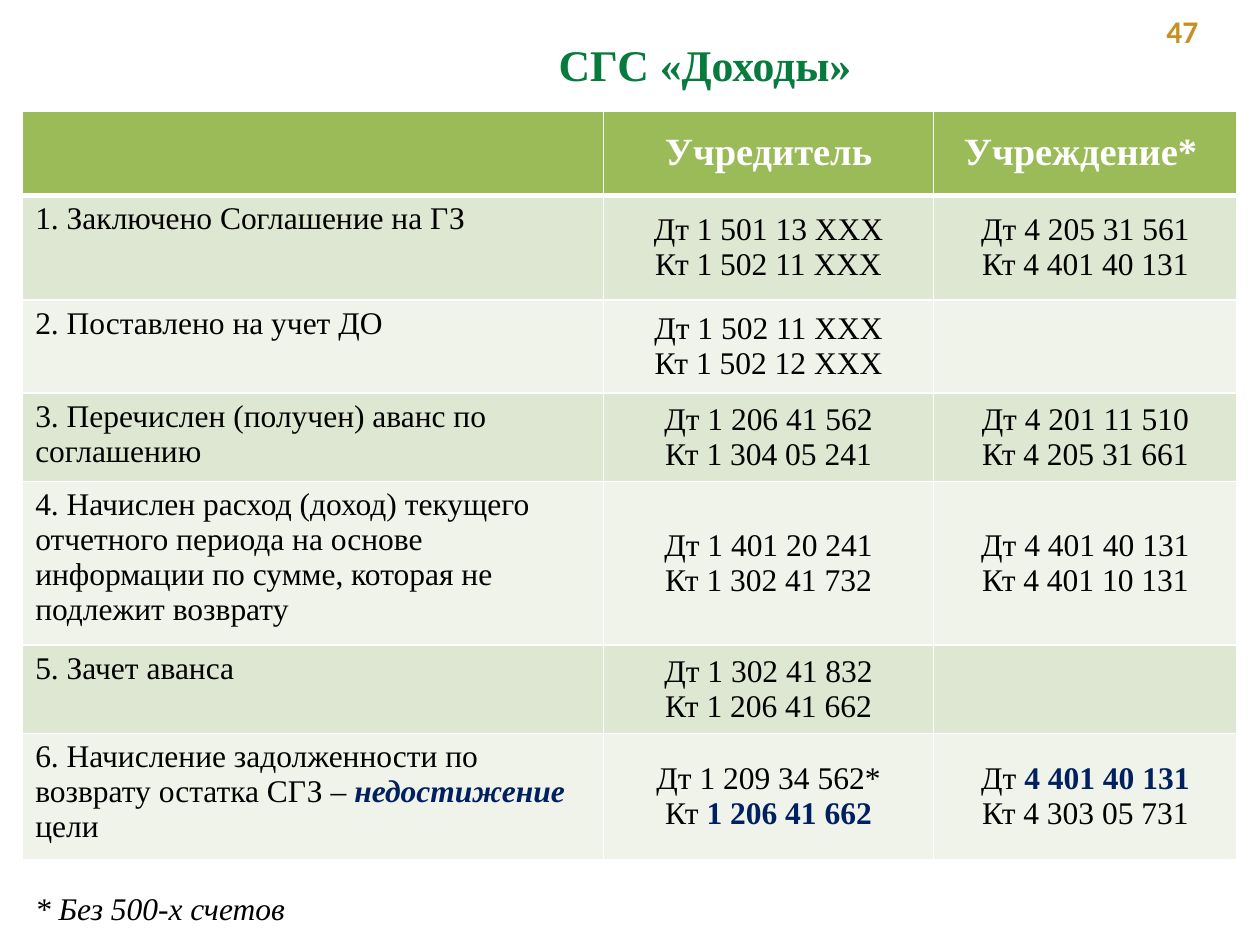
from lxml.etree import SubElement
from pptx import Presentation
from pptx.dml.color import RGBColor
from pptx.enum.text import MSO_ANCHOR, MSO_AUTO_SIZE, PP_ALIGN
from pptx.oxml.ns import qn
from pptx.util import Inches, Pt

SERIF = "Times New Roman"
BLACK, WHITE, NAVY = "000000", "FFFFFF", "002060"
HEADER_FILL, BAND_FILLS = "9BBB59", ("DEE7D1", "EFF3EA")

COL_WIDTHS = (4.61, 2.62, 2.41)
ROW_HEIGHTS = (0.67, 0.83, 0.74, 0.7, 1.3, 0.7, 1)
HEADERS = ("", "Учредитель", "Учреждение* ")
KEY_WORD = ("недостижение", {"color": NAVY, "bold": True, "italic": True})


def key_account(number):
    return (" " + number, {"color": NAVY, "bold": True})


ENTRIES = (
    (["1. Заключено Соглашение на ГЗ"],
     (["Дт 1 501 13 ХХХ"], ["Кт 1 502 11 ХХХ"]),
     (["Дт 4 205 31 561"], ["Кт 4 401 40 131"])),
    (["2. Поставлено на учет ДО"],
     (["Дт 1 502 11 ХХХ"], ["Кт 1 502 12 ХХХ"]),
     ()),
    (["3. Перечислен (получен) аванс по соглашению"],
     (["Дт 1 206 41 562"], ["Кт 1 304 05 241"]),
     (["Дт 4 201 11 510"], ["Кт 4 205 31 661"])),
    (["4. Начислен расход (доход) текущего отчетного периода на основе "
      "информации по сумме, которая не подлежит возврату"],
     (["Дт 1 401 20 241"], ["Кт 1 302 41 732"]),
     (["Дт 4 401 40 131"], ["Кт 4 401 10 131"])),
    (["5. Зачет аванса"],
     (["Дт 1 302 41 832"], ["Кт 1 206 41 662"]),
     ()),
    (["6. Начисление задолженности по возврату остатка СГЗ – ", KEY_WORD, " цели"],
     (["Дт 1 209 34 562*"], ["Кт", key_account("1 206 41 662")]),
     (["Дт", key_account("4 401 40 131")], ["Кт 4 303 05 731"])),
)


def rgb(color):
    return RGBColor.from_string(color)


def add_run(p, text, size=18, font=SERIF, color=BLACK, bold=False, italic=False):
    r = p.add_run()
    r.text = text
    r.font.size, r.font.name = Pt(size), font
    r.font.bold, r.font.italic = bold, italic
    r.font.color.rgb = rgb(color)


def place(sp, box):
    sp.left, sp.top, sp.width, sp.height = (Inches(v) for v in box)


def add_title(slide, box):
    sp = slide.shapes.title
    place(sp, box)
    tf = sp.text_frame
    tf.word_wrap = True
    tf.auto_size = MSO_AUTO_SIZE.NONE
    tf.vertical_anchor = MSO_ANCHOR.TOP
    p = tf.paragraphs[0]
    p.alignment = PP_ALIGN.CENTER
    add_run(p, "СГС «Доходы»", size=25, color="077A3E", bold=True)


def add_label(slide, box, text, **style):
    sp = slide.shapes.add_textbox(*(Inches(v) for v in box))
    tf = sp.text_frame
    tf.word_wrap = True
    add_run(tf.paragraphs[0], text, **style)


def format_cell(cell, fill, top=1, bottom=1):
    tcPr = cell._tc.get_or_add_tcPr()
    for side, width in (("L", 1), ("R", 1), ("T", top), ("B", bottom)):
        ln = SubElement(tcPr, qn("a:ln" + side), w=str(Pt(width)))
        SubElement(SubElement(ln, qn("a:solidFill")), qn("a:srgbClr"), val=WHITE)
    cell.fill.solid()
    cell.fill.fore_color.rgb = rgb(fill)


def fill_cell(cell, lines, centred=True, **style):
    tf = cell.text_frame
    if centred:
        cell.vertical_anchor = MSO_ANCHOR.MIDDLE
    for i, line in enumerate(lines):
        p = tf.add_paragraph() if i else tf.paragraphs[0]
        p.alignment = PP_ALIGN.CENTER if centred else PP_ALIGN.LEFT
        for part in line:
            text, accent = (part, {}) if isinstance(part, str) else part
            add_run(p, text, **{**style, **accent})


def add_entries_table(slide, box):
    frame = slide.shapes.add_table(len(ROW_HEIGHTS), len(COL_WIDTHS),
                                   *(Inches(v) for v in box))
    table = frame.table
    for column, width in zip(table.columns, COL_WIDTHS):
        column.width = Inches(width)
    for row, height in zip(table.rows, ROW_HEIGHTS):
        row.height = Inches(height)

    for c, header in enumerate(HEADERS):
        cell = table.cell(0, c)
        format_cell(cell, HEADER_FILL, bottom=3)
        if header:
            fill_cell(cell, [[header]], size=22, color=WHITE, bold=True)

    for i, (operation, *accounts) in enumerate(ENTRIES):
        cells = table.rows[i + 1].cells
        for cell in cells:
            format_cell(cell, BAND_FILLS[i % 2], top=1 if i else 3)
        fill_cell(cells[0], [operation], centred=False)
        for c, lines in enumerate(accounts, 1):
            fill_cell(cells[c], lines)


def main():
    prs = Presentation()
    prs.slide_width, prs.slide_height = Inches(10), Inches(7.5)
    slide = prs.slides.add_slide(prs.slide_layouts[5])
    add_title(slide, (2.6, 0.25, 5.99, 0.52))
    add_label(slide, (9.16, 0.05, 0.66, 0.4), "47",
              font="Calibri", color="C79023", bold=True)
    add_entries_table(slide, (0.18, 0.88, sum(COL_WIDTHS), sum(ROW_HEIGHTS)))
    add_label(slide, (0.18, 7.01, 2.69, 0.4), "* Без 500-х счетов", italic=True)
    prs.save("out.pptx")


if __name__ == "__main__":
    main()
